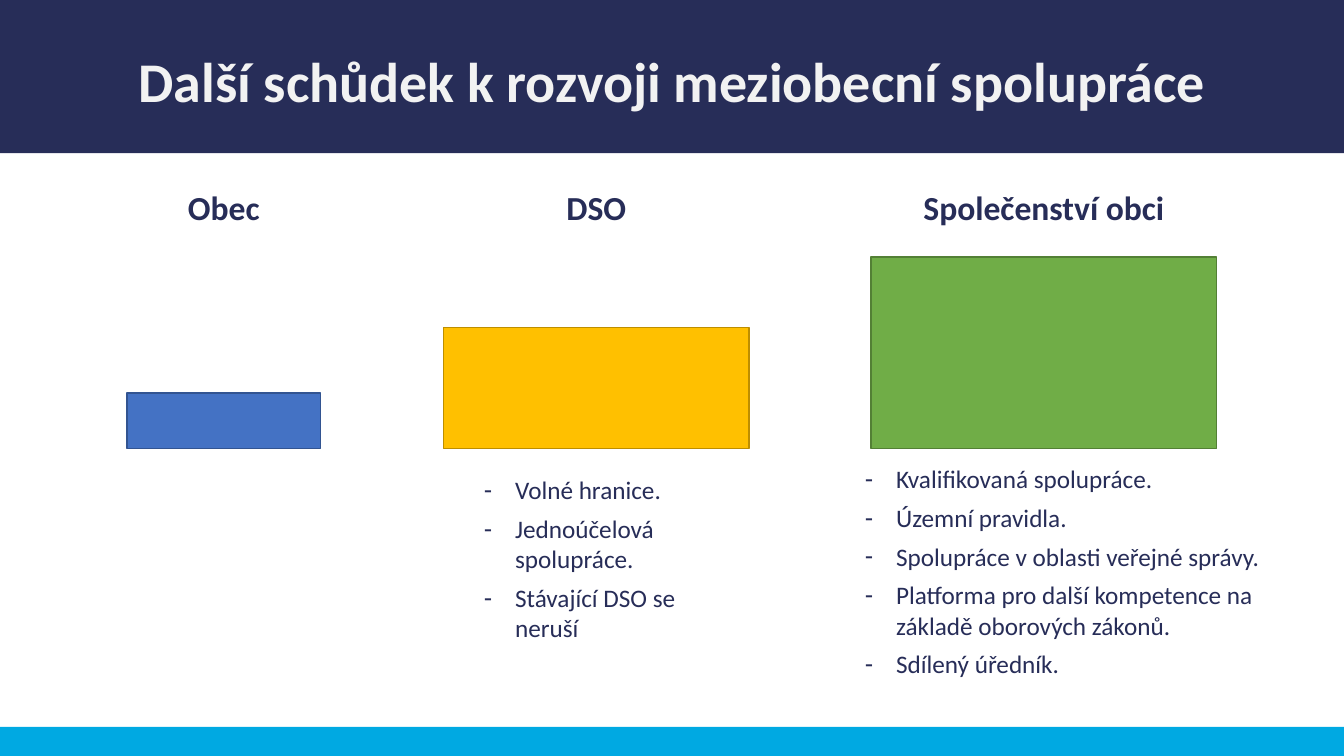
import pptx
import pptx.dml.color
import pptx.enum.shapes
import pptx.enum.text
import pptx.oxml.ns
import pptx.util
from lxml import etree

RGBColor = pptx.dml.color.RGBColor
NAVY = RGBColor(0x27, 0x2D, 0x58)
CYAN = RGBColor(0x00, 0xA9, 0xE2)
PALE = RGBColor(0xF2, 0xF2, 0xF2)
BLUE, BLUE_EDGE = RGBColor(0x44, 0x72, 0xC4), RGBColor(0x32, 0x54, 0x91)
GOLD, GOLD_EDGE = RGBColor(0xFF, 0xC0, 0x00), RGBColor(0xBD, 0x8E, 0x00)
GREEN, GREEN_EDGE = RGBColor(0x70, 0xAD, 0x47), RGBColor(0x53, 0x80, 0x35)

WIDTH, HEIGHT = pptx.util.Inches(13.33), pptx.util.Inches(7.5)
STEP_BASE = 59.33
HEADING_TOP, HEADING_HEIGHT = 24, 6.67
LEFT = pptx.enum.text.PP_ALIGN.LEFT
CENTER = pptx.enum.text.PP_ALIGN.CENTER

TITLE_FONT = {"name": "Calibri", "size": pptx.util.Pt(40), "bold": True}
HEADING_FONT = {"name": "Calibri", "size": pptx.util.Pt(24), "bold": True}
LIST_FONT = {"name": "Calibri", "size": pptx.util.Pt(18), "bold": False}
FRAME_FORMAT = {
    "word_wrap": True,
    "auto_size": pptx.enum.text.MSO_AUTO_SIZE.SHAPE_TO_FIT_TEXT,
    "vertical_anchor": pptx.enum.text.MSO_ANCHOR.TOP,
    "margin_left": pptx.util.Inches(0.1),
    "margin_right": pptx.util.Inches(0.1),
    "margin_top": pptx.util.Inches(0.05),
    "margin_bottom": pptx.util.Inches(0.05),
}

STEPS = [
    ("Obec", 9.45, 14.4, 7.33, BLUE, BLUE_EDGE),
    ("DSO", 33, 22.73, 16, GOLD, GOLD_EDGE),
    ("Společenství obci", 64.81, 25.73, 25.33, GREEN, GREEN_EDGE),
]
LISTS = [
    ((35.25, 62.13, 17.85, 28.93), [
        "Volné hranice.",
        "Jednoúčelová spolupráce.",
        "Stávající DSO se neruší",
    ]),
    ((63.6, 60.67, 31.65, 35.2), [
        "Kvalifikovaná spolupráce.",
        "Územní pravidla.",
        "Spolupráce v oblasti veřejné správy.",
        "Platforma pro další kompetence na základě oborových zákonů.",
        "Sdílený úředník.",
    ]),
]


def apply(target, formats):
    """Set every attribute named in the formats on the target."""
    for name, value in formats.items():
        setattr(target, name, value)


def place(left, top, width, height):
    """Turn percentages of the slide into lengths."""
    return (int(WIDTH * left / 100), int(HEIGHT * top / 100),
            int(WIDTH * width / 100), int(HEIGHT * height / 100))


def add_block(page, area, fill, edge=None):
    """Add a plain rectangle, outlined when an edge colour is given."""
    block = page.shapes.add_shape(
        pptx.enum.shapes.MSO_SHAPE.RECTANGLE, *place(*area))
    block.shadow.inherit = False
    block.fill.solid()
    block.fill.fore_color.rgb = fill
    if edge is None:
        block.line.fill.background()
    else:
        block.line.color.rgb = edge
        block.line.width = pptx.util.Pt(1)


def write(box, lines, font, color, alignment, gap=0):
    """Fill a box with formatted paragraphs and return them."""
    frame = box.text_frame
    frame.text = "\n".join(lines)
    apply(frame, FRAME_FORMAT)
    for para in frame.paragraphs:
        apply(para, {"alignment": alignment, "line_spacing": 1.0,
                     "space_before": pptx.util.Pt(0),
                     "space_after": pptx.util.Pt(gap)})
        for span in para.runs:
            apply(span.font, font)
            span.font.color.rgb = color
    return frame.paragraphs


def move_to_front(holder, area):
    """Position a placeholder and lift it above the other shapes."""
    holder.left, holder.top, holder.width, holder.height = place(*area)
    holder.element.getparent().append(holder.element)


def add_title(page, text, area):
    """Write the slide title in its placeholder."""
    move_to_front(page.shapes.title, area)
    write(page.shapes.title, [text], TITLE_FONT, PALE, CENTER)


def add_heading(page, text, left, width):
    """Add a centred heading above a step."""
    box = page.shapes.add_textbox(
        *place(left, HEADING_TOP, width, HEADING_HEIGHT))
    write(box, [text], HEADING_FONT, NAVY, CENTER)


def add_dash_list(holder, lines, area):
    """Write a list with hanging dashes in a body placeholder."""
    move_to_front(holder, area)
    indent = pptx.util.Inches(0.31)
    for para in write(holder, lines, LIST_FONT, NAVY, LEFT, gap=6):
        properties = para._p.get_or_add_pPr()
        properties.set("marL", str(indent))
        properties.set("indent", str(-indent))
        bullet = etree.SubElement(properties, pptx.oxml.ns.qn("a:buChar"))
        bullet.set("char", "-")


def main():
    """Build the slide and save the deck."""
    deck = pptx.Presentation()
    apply(deck, {"slide_width": WIDTH, "slide_height": HEIGHT})
    page = deck.slides.add_slide(deck.slide_layouts[3])
    add_block(page, (0, 0, 100, 20.27), NAVY)
    for name, left, width, height, fill, edge in STEPS:
        add_block(page, (left, STEP_BASE - height, width, height), fill, edge)
        add_heading(page, name, left, width)
    add_title(page, "Další schůdek k rozvoji meziobecní spolupráce",
              (0, 5.47, 100, 10.27))
    for number, (area, lines) in enumerate(LISTS, start=1):
        add_dash_list(page.placeholders[number], lines, area)
    add_block(page, (0, 96.13, 100, 3.87), CYAN)
    deck.save("out.pptx")


if __name__ == "__main__":
    main()
